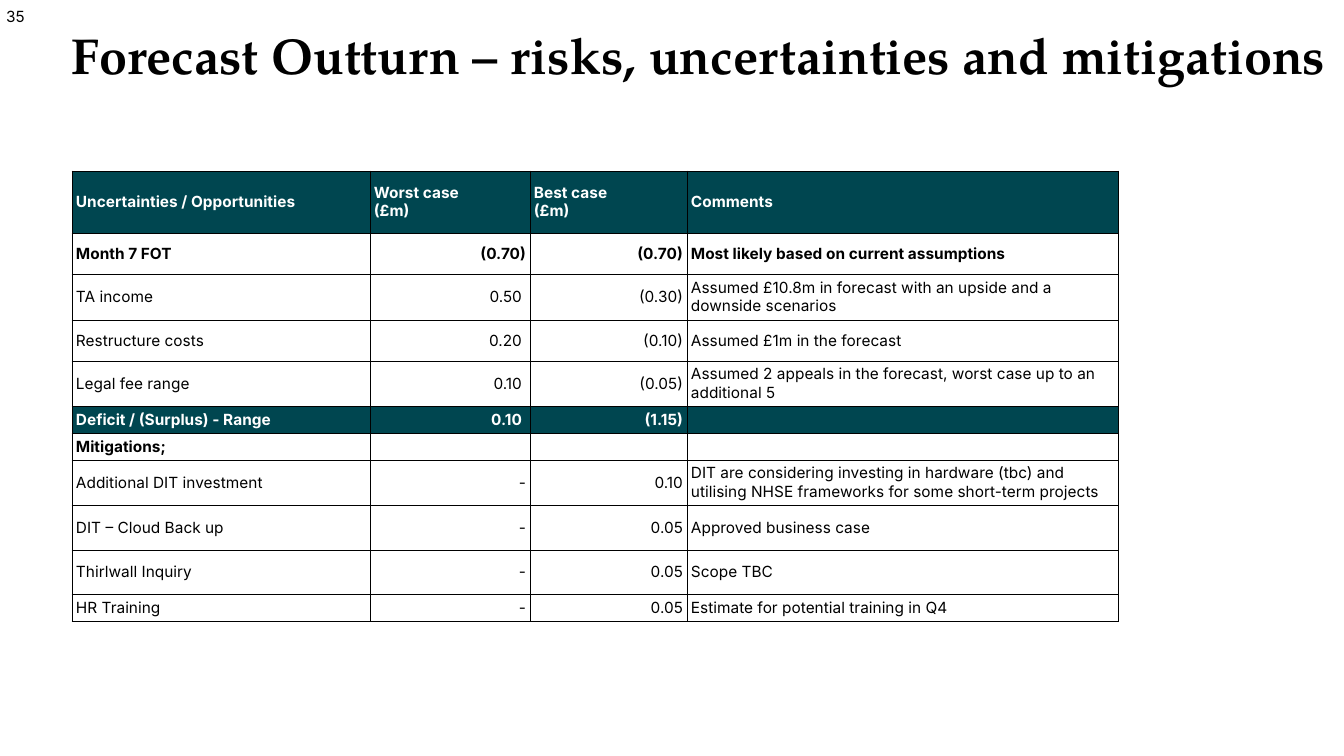
from lxml import etree
from pptx import Presentation
from pptx.dml.color import RGBColor
from pptx.enum.text import MSO_ANCHOR, PP_ALIGN
from pptx.oxml.ns import qn
from pptx.util import Emu, Pt

LEFT, CENTER, RIGHT = PP_ALIGN.LEFT, PP_ALIGN.CENTER, PP_ALIGN.RIGHT
TOP, MIDDLE = MSO_ANCHOR.TOP, MSO_ANCHOR.MIDDLE

EMU_PER_INCH = 914400
PX_PER_INCH = 100.8

THEME = {
    "black": RGBColor(0x00, 0x00, 0x00),
    "white": RGBColor(0xFF, 0xFF, 0xFF),
    "teal": RGBColor(0x00, 0x46, 0x50),
    "body_font": "Inter",
    "title_font": "TeX Gyre Pagella",
    "body_size": Pt(11),
    "title_size": Pt(36),
    "border": Pt(0.5),
}

COLUMN_WIDTHS = [298, 160, 157, 431]
COLUMN_ALIGNMENTS = [LEFT, RIGHT, RIGHT, LEFT]
WORST_CASE_COLUMN = 1
CELL_MARGIN = 4
BRACKET_SPACE = 4  # lines up positive figures with bracketed ones

# Row style, height in px, cell texts
ROWS = [
    ("header", 62, ["Uncertainties / Opportunities", "Worst case\n(£m)", "Best case\n(£m)", "Comments"]),
    ("bold", 41, ["Month 7 FOT", "(0.70)", "(0.70)", "Most likely based on current assumptions"]),
    ("plain", 46, ["TA income", "0.50", "(0.30)",
                   "Assumed £10.8m in forecast with an upside and a downside scenarios"]),
    ("plain", 41, ["Restructure costs", "0.20", "(0.10)", "Assumed £1m in the forecast"]),
    ("plain", 45, ["Legal fee range", "0.10", "(0.05)",
                   "Assumed 2 appeals in the forecast, worst case up to an additional 5"]),
    ("total", 27, ["Deficit / (Surplus) - Range", "0.10", "(1.15)", ""]),
    ("bold", 27, ["Mitigations;", "", "", ""]),
    ("plain", 45, ["Additional DIT investment", "-", "0.10",
                   "DIT are considering investing in hardware (tbc) and "
                   "utilising NHSE frameworks for some short-term projects"]),
    ("plain", 45, ["DIT – Cloud Back up", "-", "0.05", "Approved business case"]),
    ("plain", 45, ["Thirlwall Inquiry", "-", "0.05", "Scope TBC"]),
    ("plain", 27, ["HR Training", "-", "0.05", "Estimate for potential training in Q4"]),
]


def px(length):
    return Emu(round(length * EMU_PER_INCH / PX_PER_INCH))


def set_attributes(target, values):
    for name, value in values.items():
        setattr(target, name, value)


def write_text(paragraph, text, color, **font_values):
    """Write text into a paragraph, with a line break at each newline."""
    for index, line in enumerate(text.split("\n")):
        if index:
            paragraph.add_line_break()
        run = paragraph.add_run()
        run.text = line
        set_attributes(run.font, font_values)
        run.font.color.rgb = color


def add_text(slide, box, text, paragraph_values, **font_values):
    shape = slide.shapes.add_textbox(*map(px, box))
    set_attributes(shape.text_frame, {"word_wrap": True, "vertical_anchor": TOP})
    paragraph = shape.text_frame.paragraphs[0]
    set_attributes(paragraph, paragraph_values)
    write_text(paragraph, text, THEME["black"], **font_values)


def add_borders(cell):
    properties = cell._tc.get_or_add_tcPr()
    for position, side in enumerate(("a:lnL", "a:lnR", "a:lnT", "a:lnB")):
        line = etree.Element(qn(side), w=str(int(THEME["border"])))
        fill = etree.SubElement(line, qn("a:solidFill"))
        etree.SubElement(fill, qn("a:srgbClr"), val=str(THEME["black"]))
        properties.insert(position, line)


def fill_cell(cell, text, style, column):
    filled = style in ("header", "total")
    margins = dict.fromkeys(("margin_left", "margin_right", "margin_top", "margin_bottom"), px(CELL_MARGIN))
    if column == WORST_CASE_COLUMN and text[-1:].isdigit():
        margins["margin_right"] = px(CELL_MARGIN + BRACKET_SPACE)
    set_attributes(cell, {"vertical_anchor": MIDDLE, **margins})

    if filled:
        cell.fill.solid()
        cell.fill.fore_color.rgb = THEME["teal"]
    else:
        cell.fill.background()
    add_borders(cell)

    paragraph = cell.text_frame.paragraphs[0]
    paragraph.alignment = LEFT if style == "header" else COLUMN_ALIGNMENTS[column]
    if text:
        write_text(paragraph, text, THEME["white" if filled else "black"],
                   name=THEME["body_font"], size=THEME["body_size"], bold=style != "plain")
    else:
        # Keeps an empty cell from stretching its row
        etree.SubElement(paragraph._p, qn("a:endParaRPr"), sz=str(int(THEME["body_size"].pt * 100)))


def add_forecast_table(slide, left, top):
    height = sum(row_height for _, row_height, _ in ROWS)
    frame = slide.shapes.add_table(len(ROWS), len(COLUMN_WIDTHS), px(left), px(top),
                                   px(sum(COLUMN_WIDTHS)), px(height))
    table = frame.table
    set_attributes(table, {"first_row": True, "horz_banding": False})
    for column, width in zip(table.columns, COLUMN_WIDTHS):
        column.width = px(width)
    for row, (style, row_height, texts) in zip(table.rows, ROWS):
        row.height = px(row_height)
        for column, (cell, text) in enumerate(zip(row.cells, texts)):
            fill_cell(cell, text, style, column)


def main():
    presentation = Presentation()
    presentation.slide_width = px(1344)
    presentation.slide_height = px(756)
    slide = presentation.slides.add_slide(presentation.slide_layouts[6])

    # Page number
    add_text(slide, (-7, 2, 45, 40), "35", {"alignment": CENTER},
             name=THEME["body_font"], size=THEME["body_size"])
    # Title
    add_text(slide, (62, 26, 1303, 141), "Forecast Outturn – risks, uncertainties and mitigations",
             {"alignment": LEFT, "line_spacing": 0.9},
             name=THEME["title_font"], size=THEME["title_size"], bold=True)
    # Forecast table
    add_forecast_table(slide, 72, 171)

    presentation.save("out.pptx")


if __name__ == "__main__":
    main()
